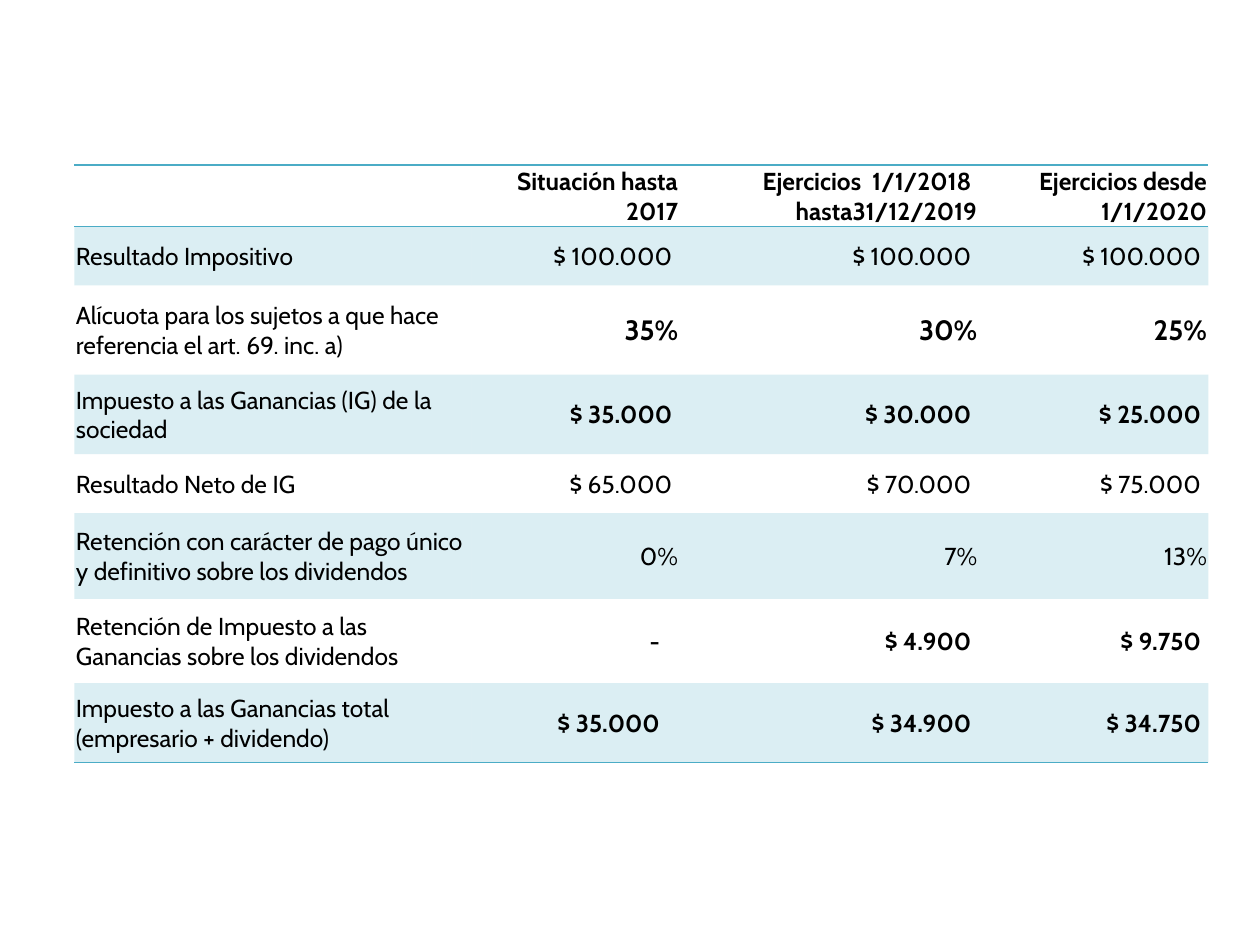
import pptx
import pptx.dml.color
import pptx.enum.text
import pptx.oxml
import pptx.oxml.ns
import pptx.util

Cm = pptx.util.Cm
Pt = pptx.util.Pt
ALIGN = pptx.enum.text.PP_ALIGN
ANCHOR = pptx.enum.text.MSO_ANCHOR

NO_STYLE = "{2D5ABB26-0587-4C30-8999-92F81FD0307C}"
TIGHT, AMOUNT, INDENTED = 0.03, 0.15, 0.4

HEADINGS = [
    [],
    ["Situación hasta", "2017"],
    ["Ejercicios  1/1/2018  hasta31/12/2019"],
    ["Ejercicios desde 1/1/2020"],
]
CONCEPTS = [
    ("Resultado Impositivo", ["$ 100.000", "$ 100.000", "$ 100.000"], 14, False, [AMOUNT] * 3),
    ("Alícuota para los sujetos a que hace referencia el art. 69. inc. a)",
     ["35%", "30%", "25%"], 16, True, [TIGHT] * 3),
    ("Impuesto a las Ganancias (IG) de la sociedad",
     ["$ 35.000", "$ 30.000", "$ 25.000"], 14, True, [AMOUNT] * 3),
    ("Resultado Neto de IG", ["$ 65.000", "$ 70.000", "$ 75.000"], 14, False, [AMOUNT] * 3),
    ("Retención con carácter de pago único y definitivo sobre los dividendos",
     ["0%", "7%", "13%"], 14, False, [TIGHT] * 3),
    ("Retención de Impuesto a las Ganancias sobre los dividendos",
     ["-", "$ 4.900", "$ 9.750"], 14, True, [INDENTED, AMOUNT, AMOUNT]),
    ("Impuesto a las Ganancias total (empresario + dividendo)",
     ["$ 35.000", "$ 34.900", "$ 34.750"], 14, True, [INDENTED, AMOUNT, AMOUNT]),
]
COLUMN_WIDTHS = [8, 4.2, 6.03, 4.63]
ROW_HEIGHTS = [1.22, 1.19, 1.8, 1.6, 1.19, 1.73, 1.7, 1.6]


def color(hex_value):
    return pptx.dml.color.RGBColor.from_string(hex_value)


class TaxSlide:
    font = "Cabin"
    ink = "000000"
    accent = "4BACC6"

    def __init__(self, presentation):
        self.slide = presentation.slides.add_slide(presentation.slide_layouts[6])

    def table(self, left, top, widths, heights):
        frame = self.slide.shapes.add_table(
            len(heights), len(widths), Cm(left), Cm(top), Cm(sum(widths)), Cm(sum(heights)))
        grid = frame.table
        grid.first_row = grid.horz_banding = False
        grid._tbl.tblPr.find(pptx.oxml.ns.qn("a:tableStyleId")).text = NO_STYLE
        for column, width in zip(grid.columns, widths):
            column.width = Cm(width)
        for row, height in zip(grid.rows, heights):
            row.height = Cm(height)
        return grid

    def text(self, cell, lines, size=14, bold=False, align=ALIGN.RIGHT,
             anchor=ANCHOR.MIDDLE, right=TIGHT):
        cell.margin_left = cell.margin_top = Cm(TIGHT)
        cell.margin_right, cell.margin_bottom = Cm(right), 0
        cell.vertical_anchor = anchor
        frame = cell.text_frame
        for index, line in enumerate(lines):
            paragraph = frame.add_paragraph() if index else frame.paragraphs[0]
            paragraph.alignment = align
            run = paragraph.add_run()
            run.text = line
            run.font.name, run.font.size, run.font.bold = self.font, Pt(size), bold
            run.font.color.rgb = color(self.ink)

    def rules(self, cell, sides):
        for side in sides:
            cell._tc.get_or_add_tcPr().append(pptx.oxml.parse_xml(
                f'<a:ln{side} {pptx.oxml.ns.nsdecls("a")} w="{Pt(1)}"><a:solidFill>'
                f'<a:srgbClr val="{self.accent}"/></a:solidFill></a:ln{side}>'))

    def shade(self, cell, banded):
        if not banded:
            cell.fill.background()
            return
        cell.fill.solid()
        cell.fill.fore_color.rgb = color(self.accent)
        tint = cell._tc.tcPr.find(".//" + pptx.oxml.ns.qn("a:solidFill") + "[last()]")
        tint = cell._tc.tcPr.findall(pptx.oxml.ns.qn("a:solidFill"))[-1][0]
        tint.append(pptx.oxml.parse_xml(
            f'<a:alpha {pptx.oxml.ns.nsdecls("a")} val="20000"/>'))


def main():
    presentation = pptx.Presentation()
    presentation.slide_width, presentation.slide_height = Cm(25.4), Cm(19.05)
    page = TaxSlide(presentation)
    comparison = page.table(1.5, 3.33, COLUMN_WIDTHS, ROW_HEIGHTS)

    for column, heading in enumerate(HEADINGS):
        page.text(comparison.cell(0, column), heading, bold=True, anchor=ANCHOR.TOP)
    for row, (concept, values, size, bold, insets) in enumerate(CONCEPTS, 1):
        page.text(comparison.cell(row, 0), [concept], align=ALIGN.LEFT)
        for column, (value, inset) in enumerate(zip(values, insets), 1):
            page.text(comparison.cell(row, column), [value], size, bold, right=inset)

    borders = {0: "TB", len(CONCEPTS): "B"}
    for row in range(len(ROW_HEIGHTS)):
        for column in range(len(COLUMN_WIDTHS)):
            cell = comparison.cell(row, column)
            page.rules(cell, borders.get(row, ""))
            page.shade(cell, row % 2 == 1)

    presentation.save("out.pptx")


if __name__ == "__main__":
    main()
